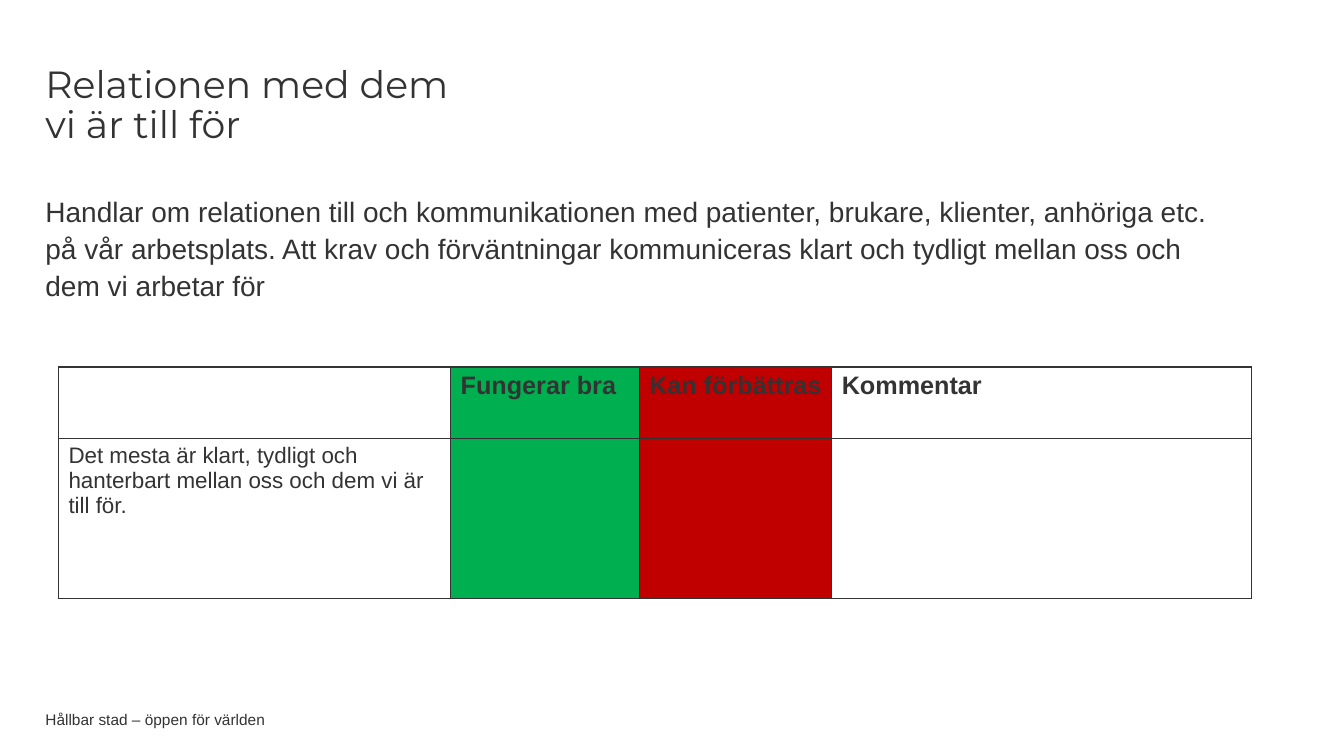
from lxml.etree import SubElement
from pptx import Presentation
from pptx.dml.color import RGBColor
from pptx.enum.text import MSO_ANCHOR, MSO_AUTO_SIZE, PP_ALIGN
from pptx.oxml import parse_xml
from pptx.oxml.ns import nsdecls, qn
from pptx.util import Pt

PX = 9144  # 100 px to the inch
INK = RGBColor(0x33, 0x33, 0x33)
GREEN = RGBColor(0x00, 0xB0, 0x50)
RED = RGBColor(0xC0, 0x00, 0x00)


def write(frame, text, size, font="Arial", bold=False, line=1.0, after=0):
    frame.text = text
    para = frame.paragraphs[0]
    props = para._p.get_or_add_pPr()
    props.set("marL", "0")
    props.set("indent", "0")
    SubElement(props, qn("a:buNone"))
    para.alignment = PP_ALIGN.LEFT
    para.line_spacing = line
    para.space_before = Pt(0)
    para.space_after = Pt(after)
    for run in para.runs:
        run.font.name = font
        run.font.size = Pt(size)
        run.font.bold = bold
        run.font.color.rgb = INK


def place(shape, left, top, width, height, anchor):
    shape.left, shape.top = left * PX, top * PX
    shape.width, shape.height = width * PX, height * PX
    frame = shape.text_frame
    frame.margin_left = frame.margin_right = 0
    frame.margin_top = frame.margin_bottom = 0
    frame.word_wrap = True
    frame.auto_size = MSO_AUTO_SIZE.NONE
    frame.vertical_anchor = anchor
    return frame


deck = Presentation()
deck.slide_width, deck.slide_height = 1333 * PX, 750 * PX
slide = deck.slides.add_slide(deck.slide_layouts[1])

# Title and body
title = place(slide.shapes.title, 45, 44, 1003, 102, MSO_ANCHOR.BOTTOM)
write(title, "Relationen med dem\vvi är till för", 27, font="Montserrat", line=0.9)
body = place(slide.placeholders[1], 45, 190, 1163, 457, MSO_ANCHOR.TOP)
write(body, "Handlar om relationen till och kommunikationen med patienter, brukare, "
      "klienter, anhöriga etc. på vår arbetsplats. Att krav och förväntningar "
      "kommuniceras klart och tydligt mellan oss och dem vi arbetar för",
      20, line=1.1, after=3)

# Footer
foot = slide.shapes.add_textbox(0, 0, 0, 0)
write(place(foot, 45, 706, 945, 16, MSO_ANCHOR.MIDDLE),
      "Hållbar stad – öppen för världen", 11)

# Table
cols, rows = [389, 187, 191, 416], [71, 159]
fills = [None, GREEN, RED, None]
texts = [
    ["", "Fungerar bra", "Kan förbättras", "Kommentar"],
    ["Det mesta är klart, tydligt och hanterbart mellan oss och dem "
     "vi är till för.", "", "", ""],
]
grid = slide.shapes.add_table(2, 4, 58 * PX, 364 * PX,
                              sum(cols) * PX, sum(rows) * PX).table
grid.first_row = grid.horz_banding = False
for col, width in zip(grid.columns, cols):
    col.width = width * PX
for r, height in enumerate(rows):
    grid.rows[r].height = height * PX
    for c, fill in enumerate(fills):
        cell = grid.cell(r, c)
        cell.margin_right = 5 * PX
        if fill is None:
            cell.fill.background()
        else:
            cell.fill.solid()
            cell.fill.fore_color.rgb = fill
        if texts[r][c]:
            write(cell.text_frame, texts[r][c], 16 if r else 18, bold=r == 0)
        # Cell borders
        props = cell._tc.get_or_add_tcPr()
        for i, side in enumerate("LRTB"):
            props.insert(i, parse_xml(
                f'<a:ln{side} {nsdecls("a")} w="12700"><a:solidFill>'
                f'<a:srgbClr val="{INK}"/></a:solidFill></a:ln{side}>'))

deck.save("out.pptx")
